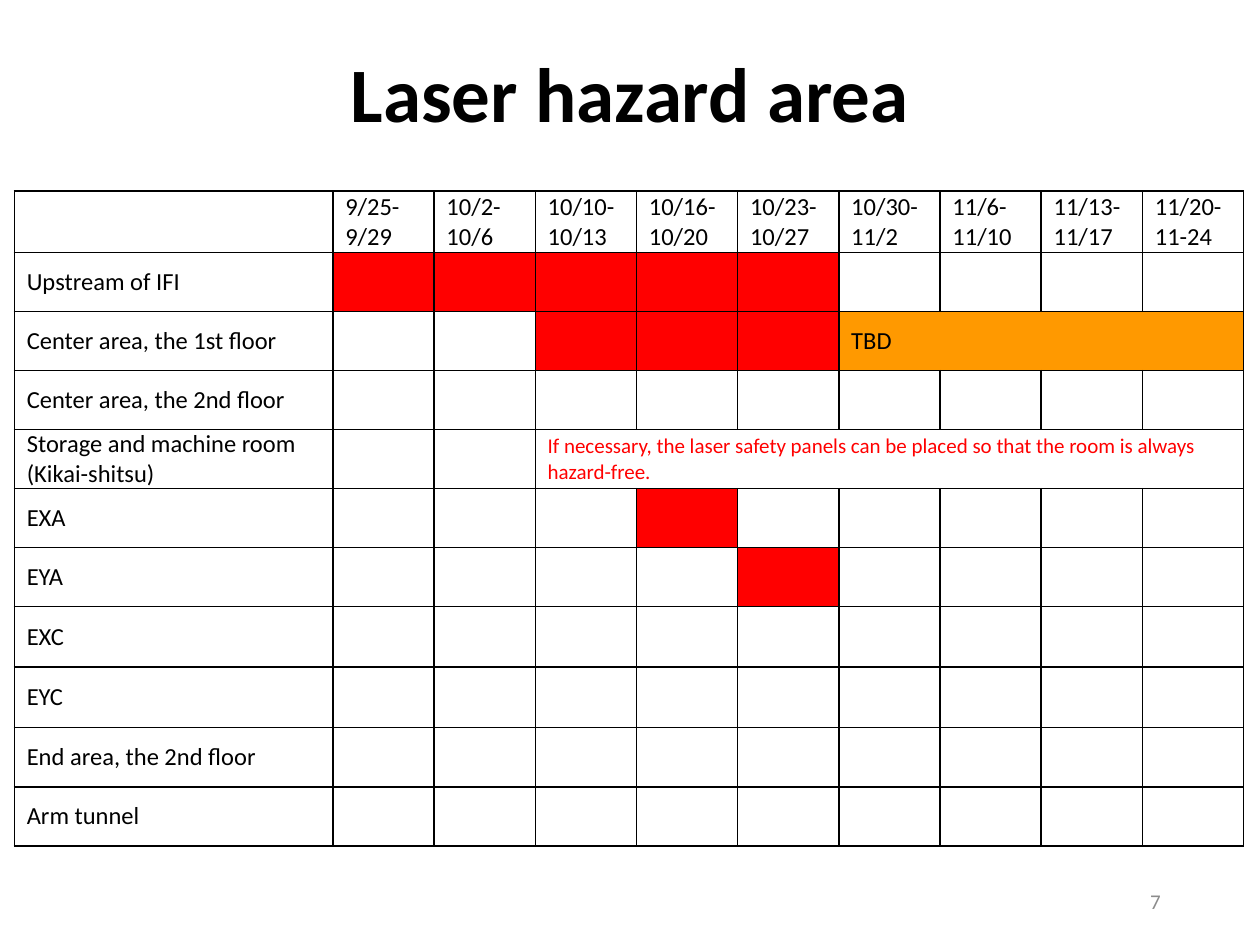
from lxml.etree import SubElement
from pptx import Presentation
from pptx.dml.color import RGBColor
from pptx.enum.text import MSO_ANCHOR as Anchor, PP_ALIGN as Align
from pptx.oxml.ns import qn
from pptx.util import Cm, Pt

FONT = "Calibri"
BLACK, GREY, RED, ORANGE = "000000", "8C8C8C", "FF0000", "FF9900"

WEEKS = ["9/25-9/29", "10/2-10/6", "10/10-10/13", "10/16-10/20", "10/23-10/27",
         "10/30-11/2", "11/6-11/10", "11/13-11/17", "11/20-11-24"]

# Each area with the week columns in which it is a hazard area
AREAS = [
    ("Upstream of IFI", range(1, 6)),
    ("Center area, the 1st floor", range(3, 6)),
    ("Center area, the 2nd floor", []),
    ("Storage and machine room\n(Kikai-shitsu)", []),
    ("EXA", [4]),
    ("EYA", [5]),
    ("EXC", []),
    ("EYC", []),
    ("End area, the 2nd floor", []),
    ("Arm tunnel", []),
]

# Notes across weeks up to the last one: row, first column, text, size, colour, fill
NOTES = [
    (2, 6, "TBD", 14, BLACK, ORANGE),
    (4, 3, "If necessary, the laser safety panels can be placed so that "
           "the room is always hazard-free.", 12, RED, None),
]

AREA_WIDTH, WEEK_WIDTH = Cm(6.42), Cm(2.04)
HEADER_HEIGHT, ROW_HEIGHT, TALL_HEIGHT = Cm(1.24), Cm(1.19), Cm(1.22)
TALL_ROWS = (7, 8)


def rgb(value):
    return RGBColor.from_string(value)


def write(frame, text, size, color=BLACK, bold=False, align=Align.LEFT):
    """Write one paragraph per line of text."""
    for index, line in enumerate(text.split("\n")):
        paragraph = frame.add_paragraph() if index else frame.paragraphs[0]
        paragraph.alignment = align
        run = paragraph.add_run()
        run.text = line
        run.font.name, run.font.size, run.font.bold = FONT, Pt(size), bold
        run.font.color.rgb = rgb(color)


def paint(cell, color):
    cell.fill.solid()
    cell.fill.fore_color.rgb = rgb(color)


def format_cell(cell):
    """Give a cell black borders, no fill and tight margins."""
    cell.vertical_anchor = Anchor.MIDDLE
    cell.margin_left = cell.margin_right = Cm(0.25)
    cell.margin_top = cell.margin_bottom = 0
    properties = cell._tc.get_or_add_tcPr()
    for side in ("a:lnL", "a:lnR", "a:lnT", "a:lnB"):
        border = SubElement(properties, qn(side), w=str(Pt(1)))
        fill = SubElement(border, qn("a:solidFill"))
        SubElement(fill, qn("a:srgbClr"), val=BLACK)
    cell.fill.background()


def add_title(slide, text):
    title = slide.shapes.title
    title.left, title.top, title.width, title.height = Cm(1.75), 0, Cm(21.9), Cm(3.94)
    title.text_frame.vertical_anchor = Anchor.MIDDLE
    write(title.text_frame, text, 44, bold=True, align=Align.CENTER)
    title.text_frame.paragraphs[0].line_spacing = 0.9


def add_page_number(slide, number):
    box = slide.shapes.add_textbox(Cm(17.93), Cm(17.65), Cm(5.72), Cm(1.02))
    box.text_frame.word_wrap = True
    box.text_frame.vertical_anchor = Anchor.MIDDLE
    write(box.text_frame, number, 12, GREY, align=Align.RIGHT)


def add_schedule(slide):
    heights = [HEADER_HEIGHT] + [TALL_HEIGHT if row in TALL_ROWS else ROW_HEIGHT
                                 for row in range(1, len(AREAS) + 1)]
    widths = [AREA_WIDTH] + [WEEK_WIDTH] * len(WEEKS)
    table = slide.shapes.add_table(len(heights), len(widths), Cm(0.29), Cm(3.85),
                                   sum(widths), sum(heights)).table
    table.first_row = table.horz_banding = False
    for column, width in zip(table.columns, widths):
        column.width = width
    for row, height in zip(table.rows, heights):
        row.height = height
    for cell in table.iter_cells():
        format_cell(cell)

    # Header, area names and hazard weeks
    for column, week in enumerate(WEEKS, 1):
        write(table.cell(0, column).text_frame, week, 14)
    for row, (area, hazard_weeks) in enumerate(AREAS, 1):
        write(table.cell(row, 0).text_frame, area, 14)
        for column in hazard_weeks:
            paint(table.cell(row, column), RED)

    # Notes in merged cells
    for row, column, text, size, color, fill in NOTES:
        note = table.cell(row, column)
        note.merge(table.cell(row, len(WEEKS)))
        write(note.text_frame, text, size, color)
        if fill:
            paint(note, fill)


def main():
    deck = Presentation()
    deck.slide_width, deck.slide_height = Cm(25.4), Cm(19.05)
    slide = deck.slides.add_slide(deck.slide_layouts[5])
    add_title(slide, "Laser hazard area")
    add_page_number(slide, "7")
    add_schedule(slide)
    deck.save("out.pptx")


if __name__ == "__main__":
    main()
